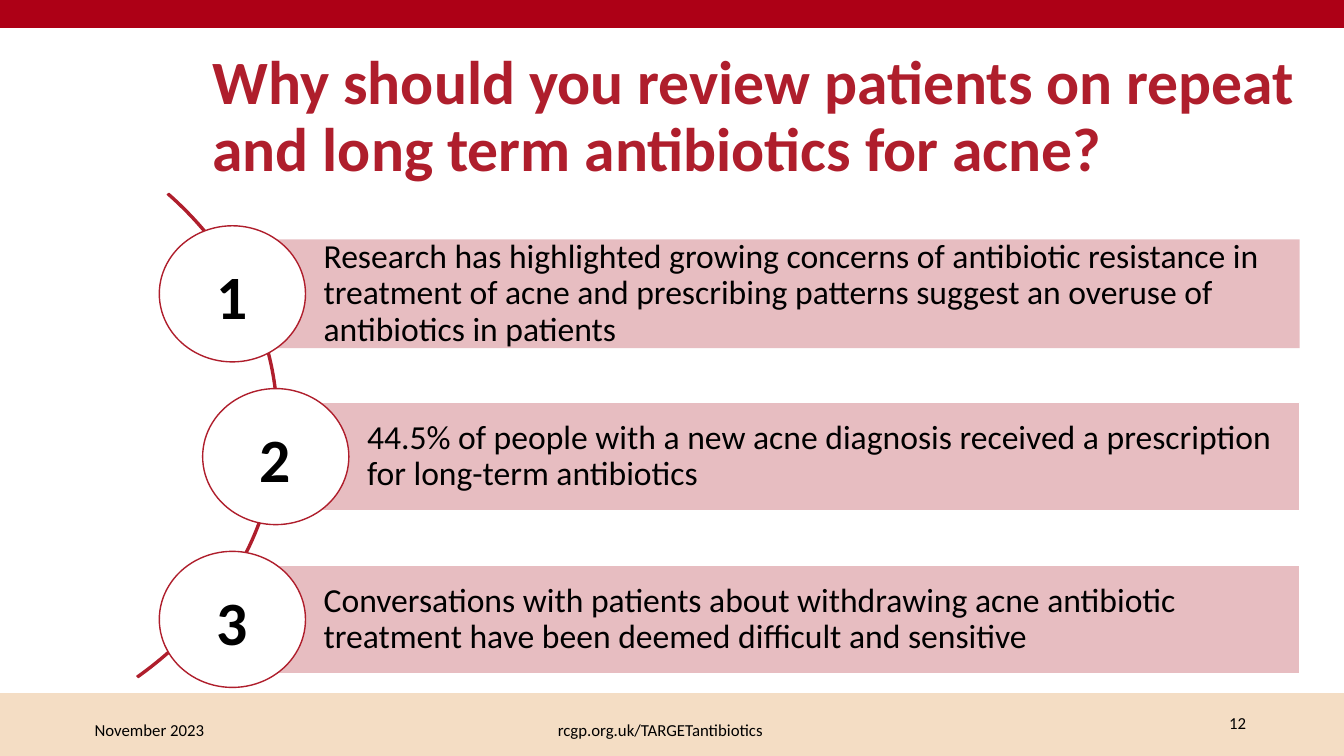
import pptx
import pptx.util
import pptx.dml.color
import pptx.enum.shapes
import pptx.enum.text
from lxml import etree
from pptx.util import Inches

SHAPE = pptx.enum.shapes.MSO_SHAPE
ANCHOR = pptx.enum.text.MSO_ANCHOR
ALIGN = pptx.enum.text.PP_ALIGN

COLOURS = {
    "band": "AD0016",
    "accent": "AF1E2C",
    "footer": "F4DDC4",
    "white": "FFFFFF",
    "black": "000000",
}
REASONS = [
    "Research has highlighted growing concerns of antibiotic resistance in treatment of acne "
    "and prescribing patterns suggest an overuse of antibiotics in patients",
    "44.5% of people with a new acne diagnosis received a prescription for long-term antibiotics",
    "Conversations with patients about withdrawing acne antibiotic treatment have been deemed "
    "difficult and sensitive",
]


def colour(name):
    return pptx.dml.color.RGBColor.from_string(COLOURS[name])


def add_figure(slide, kind, box, fill, line=None, opacity=100):
    shape = slide.shapes.add_shape(kind, *map(Inches, box))
    shape.shadow.inherit = False
    shape.fill.solid()
    shape.fill.fore_color.rgb = colour(fill)
    if opacity < 100:
        tag = pptx.oxml.ns.qn
        rgb = shape.fill._xPr.find(tag("a:solidFill")).find(tag("a:srgbClr"))
        etree.SubElement(rgb, tag("a:alpha")).set("val", str(opacity * 1000))
    if line:
        shape.line.color.rgb = colour(line)
        shape.line.width = pptx.util.Pt(1)
    else:
        shape.line.fill.background()
    return shape


def write_text(shape, text, size, bold=False, ink="black", align=ALIGN.LEFT,
               anchor=ANCHOR.TOP, spacing=1.0, insets=(0.1, 0.05, 0.1, 0.05)):
    frame = shape.text_frame
    frame.word_wrap = True
    frame.vertical_anchor = anchor
    (frame.margin_left, frame.margin_top,
     frame.margin_right, frame.margin_bottom) = map(Inches, insets)
    paragraph = frame.paragraphs[0]
    paragraph.alignment = align
    paragraph.line_spacing = spacing
    run = paragraph.add_run()
    run.text = text
    run.font.name = "Calibri"
    run.font.size = pptx.util.Pt(size)
    run.font.bold = bold
    run.font.color.rgb = colour(ink)


def add_text(slide, box, text, size, **style):
    write_text(slide.shapes.add_textbox(*map(Inches, box)), text, size, **style)


def add_background(slide, width, height):
    add_figure(slide, SHAPE.RECTANGLE, (0, height - 0.62, width, 0.62), "footer", "footer")
    add_figure(slide, SHAPE.RECTANGLE, (0, -0.01, width, 0.28), "band", "band")


def add_reason(slide, number, text, left, top, right):
    """Place a bar with its numbered circle; left and top are those of the circle."""
    bar_left = left + 0.73
    bar = add_figure(slide, SHAPE.RECTANGLE, (bar_left, top + 0.135, right - bar_left, 1.08),
                     "accent", "white" if number > 1 else None, opacity=29)
    write_text(bar, text, 24, anchor=ANCHOR.MIDDLE, spacing=0.9,
               insets=(0.9, 0.07, 0.07, 0.07))
    add_figure(slide, SHAPE.OVAL, (left, top, 1.45, 1.35), "white", "accent")
    add_text(slide, (left + 0.47, top + 0.27, 0.51, 0.8), str(number), 44, bold=True)


def add_reasons(slide, left, top, right):
    # Curve behind the circles
    arc = add_figure(slide, SHAPE.BLOCK_ARC, (left - 6.64, top - 1.34, 7.82, 6.6),
                     "accent", "accent")
    for index, value in enumerate((192.65, 27, 0.003)):
        arc.adjustments[index] = value
    # Circles follow the curve, so the middle one sits further right
    for index, text in enumerate(REASONS):
        add_reason(slide, index + 1, text, left + 0.43 * (index % 2), top + 1.615 * index, right)


def add_footer(slide, top):
    add_text(slide, (9.5, top - 0.02, 3, 0.4), "12", 12, align=ALIGN.RIGHT,
             insets=(0.1, 0.05, 0.14, 0.05))
    add_text(slide, (0.84, top, 3, 0.4), "November 2023", 12, anchor=ANCHOR.MIDDLE)
    add_text(slide, (4.3, top, 4.5, 0.4), "rcgp.org.uk/TARGETantibiotics", 12,
             align=ALIGN.CENTER, anchor=ANCHOR.MIDDLE)


def main():
    presentation = pptx.Presentation()
    presentation.slide_width = Inches(13.33)
    presentation.slide_height = Inches(7.5)
    slide = presentation.slides.add_slide(presentation.slide_layouts[6])

    add_background(slide, 13.33, 7.5)
    # Title
    add_text(slide, (2.01, 0.34, 11.15, 1.54),
             "Why should you review patients on repeat and long term antibiotics for acne?",
             44, bold=True, ink="accent", anchor=ANCHOR.BOTTOM, spacing=0.9)
    add_reasons(slide, 1.58, 2.24, 12.89)
    add_footer(slide, 7.04)
    presentation.save("out.pptx")


if __name__ == "__main__":
    main()
